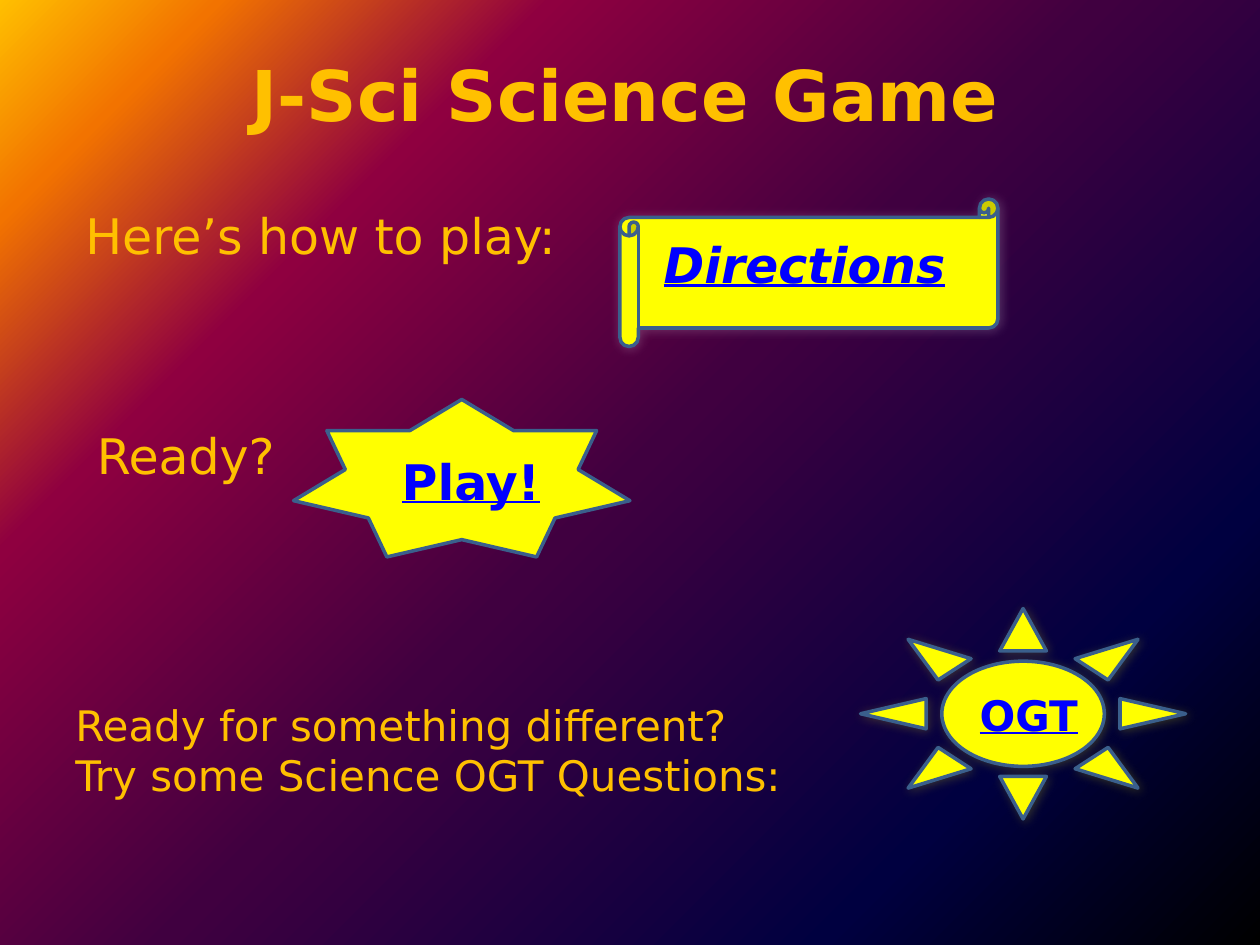
import pptx
import pptx.util
import pptx.dml.color
import pptx.enum.shapes
import pptx.enum.text
import pptx.oxml
import pptx.oxml.ns

Inches = pptx.util.Inches
Pt = pptx.util.Pt
KIND = pptx.enum.shapes.MSO_SHAPE
ALIGN = pptx.enum.text.PP_ALIGN
ANCHOR = pptx.enum.text.MSO_ANCHOR
FIT = pptx.enum.text.MSO_AUTO_SIZE
NS = pptx.oxml.ns.nsdecls("a", "p")

FONT = "DejaVu Sans"
GOLD, YELLOW, BLUE, EDGE = "FFC000", "FFFF00", "0000FF", "3A5F8C"
STOPS = [(0, "000000"), (20, "000040"), (50, "400040"),
         (75, "8F0040"), (90, "F27300"), (100, "FFBF00")]

TITLE = ("J-Sci Science Game", (0.71, 0.33, 8.5, 0.83))
PROMPTS = [
    ("Here’s how to play:", (0.58, 1.58, 4.5, 0.57), 28),
    ("Ready?", (0.67, 3.33, 1.75, 0.57), 28),
    ("Ready for something different? \vTry some Science OGT Questions:",
     (0.5, 5.5, 6.17, 0.91), 24),
]
LINK = {"bold": True, "underline": True}
BUTTONS = [
    {"kind": KIND.HORIZONTAL_SCROLL, "box": (4.92, 1.58, 3, 1.17), "glow": "FFFFFF",
     "text": "Directions", "label": (4.97, 1.86, 2.83, 0.38), "size": 28,
     "style": {**LINK, "italic": True}, "align": ALIGN.CENTER, "pad": 0},
    {"kind": KIND.STAR_7_POINT, "box": (2.33, 3.17, 2.67, 1.25), "glow": None,
     "text": "Play!", "label": (3.09, 3.58, 1.3, 0.43), "size": 28,
     "style": LINK, "align": ALIGN.LEFT, "pad": 0},
    {"kind": KIND.SUN, "box": (6.83, 4.83, 2.58, 1.67), "glow": YELLOW,
     "text": "OGT", "label": (7.58, 5.42, 1.17, 0.5), "size": 24,
     "style": LINK, "align": ALIGN.CENTER, "pad": 0.05},
]


def rgb(code):
    return pptx.dml.color.RGBColor.from_string(code)


def place(box):
    return [Inches(n) for n in box]


def paint(slide):
    """Fill the background with a gradient centred on the lower right corner."""
    stops = "".join(f'<a:gs pos="{at * 1000}"><a:srgbClr val="{code}"/></a:gs>'
                    for at, code in STOPS)
    back = pptx.oxml.parse_xml(
        f'<p:bg {NS}><p:bgPr><a:gradFill rotWithShape="0"><a:gsLst>{stops}</a:gsLst>'
        '<a:path path="circle"><a:fillToRect l="100000" t="100000"/></a:path>'
        '</a:gradFill><a:effectLst/></p:bgPr></p:bg>')
    slide.element.cSld.insert(0, back)


def write(shapes, text, box, size, color=GOLD, style=None, align=ALIGN.LEFT,
          anchor=ANCHOR.TOP, pad=0.05, fit=FIT.SHAPE_TO_FIT_TEXT):
    item = shapes.add_textbox(*place(box))
    frame = item.text_frame
    margin = Inches(pad)
    for name, value in {"word_wrap": True, "auto_size": fit, "vertical_anchor": anchor,
                        "margin_top": margin, "margin_bottom": margin}.items():
        setattr(frame, name, value)
    para = frame.paragraphs[0]
    para.text = text
    para.alignment = align
    for run in para.runs:
        run.font.color.rgb = rgb(color)
        for name, value in {"name": FONT, "size": Pt(size), **(style or {})}.items():
            setattr(run.font, name, value)


def shade(shape, code):
    """Add a soft, faint glow-like shadow."""
    shape.element.spPr.append(pptx.oxml.parse_xml(
        f'<a:effectLst {NS}><a:outerShdw blurRad="{Pt(6)}" dist="{Pt(1)}" dir="2700000" '
        f'algn="ctr" rotWithShape="0"><a:srgbClr val="{code}"><a:alpha val="20000"/>'
        '</a:srgbClr></a:outerShdw></a:effectLst>'))


def button(slide, item):
    group = slide.shapes.add_group_shape()
    shape = group.shapes.add_shape(item["kind"], *place(item["box"]))
    shape.fill.solid()
    shape.fill.fore_color.rgb = rgb(YELLOW)
    shape.line.color.rgb = rgb(EDGE)
    shape.line.width = Pt(2)
    if item["glow"]:
        shade(shape, item["glow"])
    else:
        shape.shadow.inherit = False
    write(group.shapes, item["text"], item["label"], item["size"], BLUE,
          item["style"], item["align"], pad=item["pad"])


def main():
    deck = pptx.Presentation()
    deck.slide_width, deck.slide_height = Inches(10), Inches(7.5)
    slide = deck.slides.add_slide(deck.slide_layouts[6])
    paint(slide)
    write(slide.shapes, *TITLE, 40, style={"bold": True}, align=ALIGN.CENTER,
          anchor=ANCHOR.MIDDLE, fit=FIT.NONE)
    for prompt in PROMPTS:
        write(slide.shapes, *prompt)
    for item in BUTTONS:
        button(slide, item)
    deck.save("out.pptx")


if __name__ == "__main__":
    main()
